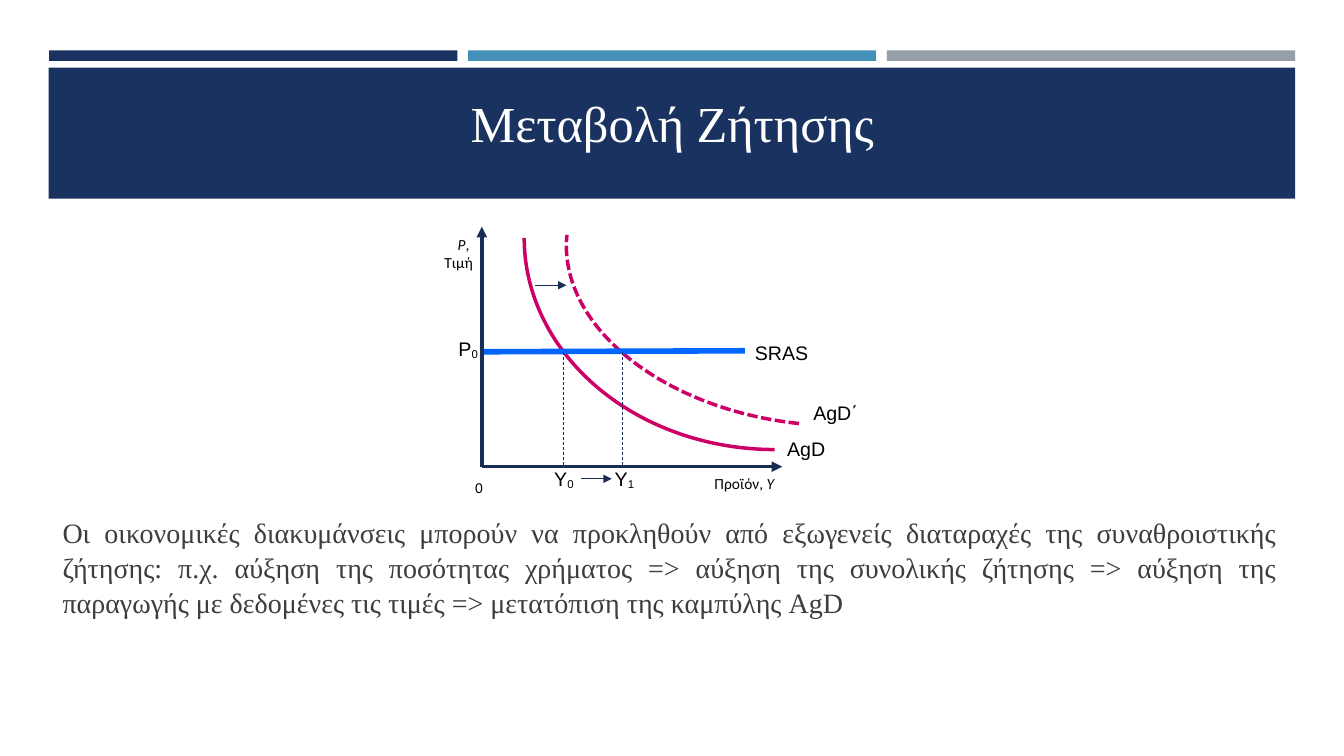
from dataclasses import dataclass

from lxml.etree import SubElement
from pptx import Presentation
from pptx.dml.color import RGBColor
from pptx.enum.dml import MSO_LINE
from pptx.enum.shapes import MSO_CONNECTOR, MSO_SHAPE
from pptx.enum.text import MSO_ANCHOR, MSO_AUTO_SIZE, PP_ALIGN
from pptx.oxml.ns import qn
from pptx.util import Emu, Pt

# Grid: 160 columns by 90 rows of square cells
COLUMNS, ROWS, CELL = 160, 90, 76200

NAVY, STEEL, GREY = "1A3260", "4590B8", "969FA7"
AXIS, DEMAND, SUPPLY = "172D56", "CC0066", "0066FF"
BLACK, WHITE, BODY = "000000", "FFFFFF", "3D3D3D"

TITLE_TEXT = "Μεταβολή Ζήτησης"
BODY_TEXT = (
    "Οι οικονομικές διακυμάνσεις μπορούν να προκληθούν από εξωγενείς διαταραχές "
    "της συναθροιστικής ζήτησης: π.χ. αύξηση της ποσότητας χρήματος => αύξηση της "
    "συνολικής ζήτησης => αύξηση της παραγωγής με δεδομένες τις τιμές => "
    "μετατόπιση της καμπύλης AgD"
)


@dataclass
class Span:
    text: str
    italic: bool = False
    lowered: bool = False


@dataclass
class Label:
    column: float
    row: float
    width: float
    height: float
    lines: list[list[Span]]
    size: int = 14
    font: str = "Arial"
    align: PP_ALIGN = PP_ALIGN.LEFT
    inset: float = 1.2


@dataclass
class Segment:
    start: tuple[float, float]
    end: tuple[float, float]
    color: str
    weight: float
    dash: MSO_LINE | None = None
    arrow: bool = False


@dataclass
class Curve:
    column: float
    row: float
    width: float
    height: float
    rotation: float
    dash: MSO_LINE | None = None


def cells(count: float) -> Emu:
    return Emu(round(count * CELL))


def rgb(color: str) -> RGBColor:
    return RGBColor.from_string(color)


def place(shape, column: float, row: float, width: float, height: float) -> None:
    shape.left, shape.top = cells(column), cells(row)
    shape.width, shape.height = cells(width), cells(height)


def style_font(font, name: str, size: float, color: str) -> None:
    font.name, font.size = name, Pt(size)
    font.color.rgb = rgb(color)


def style_line(line, color: str, weight: float, dash: MSO_LINE | None) -> None:
    line.color.rgb = rgb(color)
    line.width = Pt(weight)
    if dash is not None:
        line.dash_style = dash


def add_band(page, column: float, row: float, width: float, height: float, color: str) -> None:
    band = page.shapes.add_shape(MSO_SHAPE.RECTANGLE, *map(cells, (column, row, width, height)))
    band.shadow.inherit = False
    band.fill.solid()
    band.fill.fore_color.rgb = rgb(color)
    band.line.fill.background()


def add_curve(page, curve: Curve) -> None:
    bounds = (curve.column, curve.row, curve.width, curve.height)
    arc = page.shapes.add_shape(MSO_SHAPE.ARC, *map(cells, bounds))
    arc.shadow.inherit = False
    arc.rotation = curve.rotation
    arc.fill.background()
    style_line(arc.line, DEMAND, 2.5, curve.dash)


def add_segment(page, segment: Segment) -> None:
    connector = page.shapes.add_connector(
        MSO_CONNECTOR.STRAIGHT, *map(cells, segment.start + segment.end))
    style_line(connector.line, segment.color, segment.weight, segment.dash)
    properties = connector._element.spPr
    if segment.arrow:
        SubElement(properties.find(qn("a:ln")), qn("a:tailEnd"), type="triangle")
    SubElement(properties, qn("a:effectLst"))


def add_label(page, label: Label) -> None:
    bounds = (label.column, label.row, label.width, label.height)
    frame = page.shapes.add_textbox(*map(cells, bounds)).text_frame
    frame.word_wrap = True
    frame.margin_left = frame.margin_right = cells(label.inset)
    for index, line in enumerate(label.lines):
        para = frame.add_paragraph() if index else frame.paragraphs[0]
        para.alignment = label.align
        style_font(para.font, label.font, label.size, BLACK)
        for span in line:
            run = para.add_run()
            run.text = span.text
            if span.italic:
                run.font.italic = True
            if span.lowered:
                run._r.get_or_add_rPr().set("baseline", "-10000")


def fill_placeholder(page, box, text: str, size: int, color: str,
                     align: PP_ALIGN, anchor: MSO_ANCHOR):
    page.shapes._spTree.append(box._element)  # bring in front of the bands
    frame = box.text_frame
    frame.text = text
    frame.word_wrap = True
    frame.auto_size = MSO_AUTO_SIZE.NONE
    frame.vertical_anchor = anchor
    para = frame.paragraphs[0]
    para.alignment = align
    style_font(para.font, "Times New Roman", size, color)
    return para


# Diagram positions
ORIGIN_X, ORIGIN_Y, PRICE_Y = 57.36, 55.56, 41.88
OUTPUTS = (67.08, 74.04)

CURVES = [
    Curve(62.4, 3.12, 59.64, 50.4, 180),
    Curve(67.32, 11.64, 59.64, 38.88, 186, MSO_LINE.SQUARE_DOT),
]
SEGMENTS = [
    Segment((88.68, 41.76), (57.48, PRICE_Y), SUPPLY, 4),
    Segment((ORIGIN_X, ORIGIN_Y), (ORIGIN_X, 27), AXIS, 2.5, arrow=True),
    Segment((ORIGIN_X, ORIGIN_Y), (93.12, ORIGIN_Y), AXIS, 2.5, arrow=True),
    *(Segment((x, PRICE_Y), (x, ORIGIN_Y), AXIS, 0.5, MSO_LINE.DASH) for x in OUTPUTS),
    *(Segment((x, y), (x + 3.72, y), AXIS, 1, arrow=True)
      for x, y in ((69.12, 57), (63.72, 33.96))),
]
LABELS = [
    Label(92.52, 51.48, 11.52, 4.08, [[Span("AgD")]]),
    Label(95.64, 47.16, 11.52, 4.08, [[Span("AgD΄")]]),
    Label(88.68, 39.96, 9.6, 4.08, [[Span("SRAS")]]),
    Label(55.56, 56.52, 1.92, 3.24, [[Span("0")]], 10, align=PP_ALIGN.RIGHT, inset=0),
    Label(81.36, 55.8, 12, 3.48, [[Span("Προϊόν, "), Span("Y", italic=True)]],
          11, "Calibri", PP_ALIGN.RIGHT),
    Label(42.36, 27.36, 15.12, 4.08, [[Span("P", italic=True), Span(", ")], [Span("Τιμή")]],
          11, "Calibri", PP_ALIGN.RIGHT),
    *(Label(x, y, 5.16, 4.08, [[Span(letter), Span(digit, lowered=True)]])
      for x, y, letter, digit in (
          (53.4, 39.48, "P", "0"), (64.8, 54.96, "Υ", "0"), (72, 54.96, "Υ", "1"))),
]


def main() -> None:
    deck = Presentation()
    deck.slide_width, deck.slide_height = cells(COLUMNS), cells(ROWS)
    page = deck.slides.add_slide(deck.slide_layouts[1])

    # Header bands
    for index, color in enumerate((NAVY, STEEL, GREY)):
        add_band(page, 5.85 + index * 49.87, 6, 48.6, 1.25, color)
    add_band(page, 5.8, 8.04, 148.4, 15.6, NAVY)

    # Title and body
    title, body = page.shapes.title, page.placeholders[1]
    place(title, 7.68, 8.28, 144.72, 10.44)
    fill_placeholder(page, title, TITLE_TEXT, 36, WHITE, PP_ALIGN.CENTER, MSO_ANCHOR.BOTTOM)
    place(body, 6.24, 60.6, 147, 26.28)
    para = fill_placeholder(page, body, BODY_TEXT, 20, BODY, PP_ALIGN.JUSTIFY, MSO_ANCHOR.TOP)
    para.line_spacing, para.space_after = 1.04, Pt(6)
    properties = para._p.get_or_add_pPr()
    properties.set("marL", "0")
    properties.set("indent", "0")
    properties.insert_element_before(properties.makeelement(qn("a:buNone")), "a:defRPr")

    # Demand shift diagram
    for curve in CURVES:
        add_curve(page, curve)
    for segment in SEGMENTS:
        add_segment(page, segment)
    for label in LABELS:
        add_label(page, label)

    deck.save("out.pptx")


if __name__ == "__main__":
    main()
